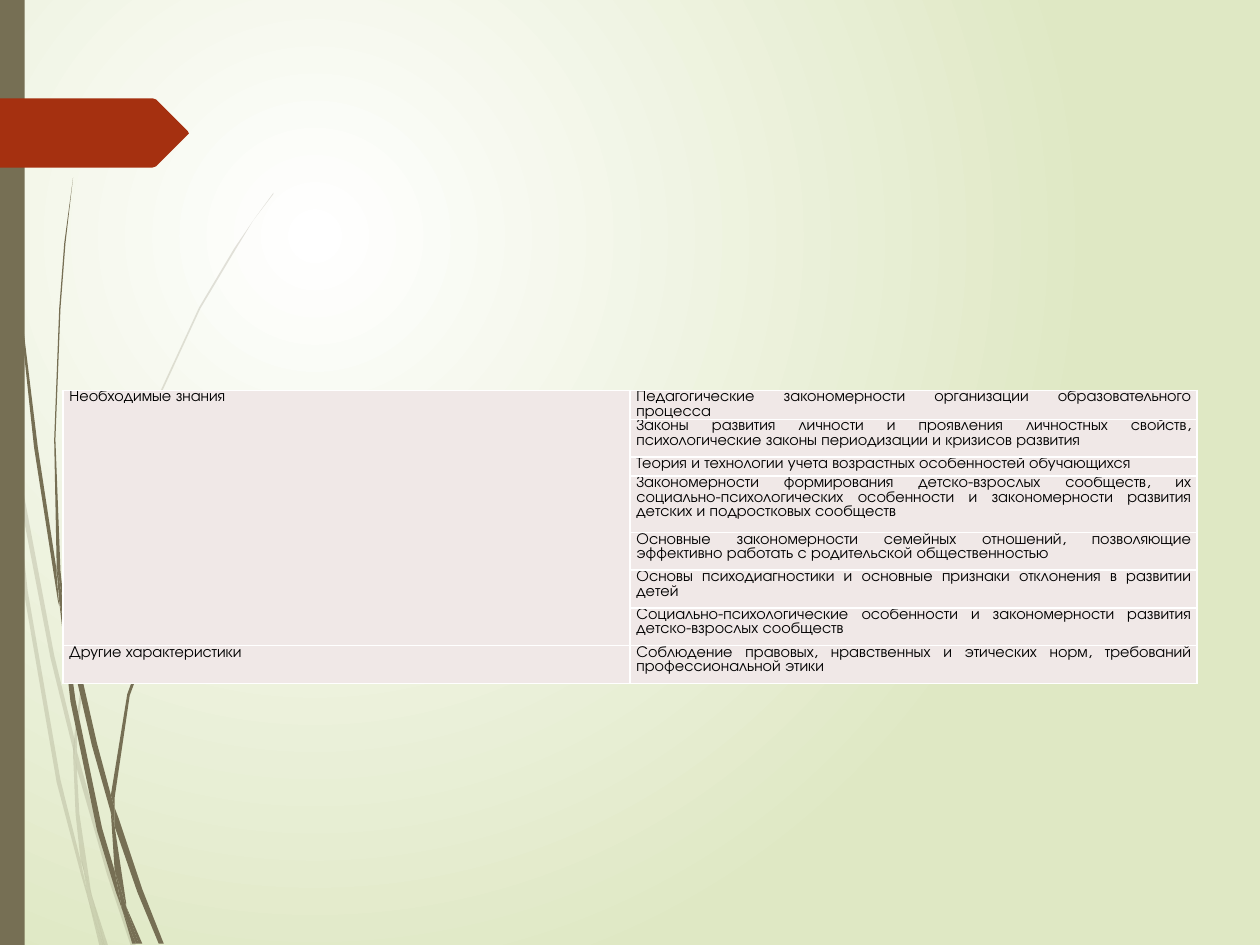
from dataclasses import dataclass

from lxml import etree
from pptx import Presentation
from pptx.dml.color import RGBColor
from pptx.enum.shapes import MSO_SHAPE as Shape
from pptx.enum.text import PP_ALIGN as Align
from pptx.oxml import parse_xml
from pptx.oxml.ns import nsdecls, qn
from pptx.util import Cm, Pt

OLIVE = RGBColor(0x76, 0x6F, 0x54)
RUST = RGBColor(0xA5, 0x30, 0x10)
ROSE = RGBColor(0xF0, 0xE8, 0xE7)
BLACK = RGBColor(0, 0, 0)
WHITE = RGBColor(0xFF, 0xFF, 0xFF)
SAGE = RGBColor(0xDF, 0xE8, 0xC4)
FONT = "TeX Gyre Adventor"
UNIT = Cm(2.54) / 100  # outline nodes are in hundredths of an inch

Node = tuple[int, int]


@dataclass
class Plant:
    opacity: int  # per cent
    leaves: list[list[Node]]


@dataclass
class Section:
    title: str
    align: Align
    entries: list[str]
    heights: list[float]  # cm


PALE_PLANT = Plant(20, [
    [(8, 350), (6, 322), (0, 282), (0, 299), (7, 344)],
    [(40, 522), (59, 599), (59, 586), (43, 520), (10, 345), (12, 376)],
    [(64, 607), (61, 596), (61, 610), (85, 694), (104, 751), (108, 751), (88, 692)],
    [(83, 751), (86, 751), (73, 711)],
    [(64, 683), (48, 619), (22, 469), (12, 376), (8, 350), (19, 470), (45, 621),
     (64, 693), (70, 714), (69, 707)],
    [(58, 599), (60, 646), (64, 683), (67, 692), (73, 711), (72, 706), (63, 646),
     (61, 610), (61, 608)],
    [(61, 584), (76, 462), (111, 349), (159, 245), (187, 198), (201, 175), (217, 154),
     (217, 153), (201, 175), (186, 197), (158, 244), (110, 348), (75, 461), (59, 584),
     (59, 586), (61, 596)],
    [(70, 714), (79, 751), (82, 751)],
    [(61, 608), (61, 610), (61, 596), (59, 586), (58, 599)],
    [(67, 692), (65, 683), (69, 707), (70, 714), (82, 751), (83, 751), (73, 711)],
])
DARK_PLANT = Plant(100, [
    [(5, 110), (14, 233), (27, 355), (46, 477), (47, 481), (45, 457), (45, 453),
     (30, 355), (15, 232), (6, 109), (4, 48), (3, 0), (2, 0), (3, 48)],
    [(73, 592), (88, 645), (88, 633), (88, 631), (77, 590), (50, 472), (53, 505)],
    [(94, 649), (91, 641), (91, 656), (109, 708), (126, 749), (130, 749), (113, 706)],
    [(91, 691), (81, 657), (60, 556), (53, 505), (47, 477), (56, 557), (77, 659),
     (92, 708), (97, 722), (96, 717)],
    [(50, 472), (48, 453), (44, 349), (48, 245), (52, 193), (58, 141), (51, 193),
     (47, 245), (43, 349), (45, 449), (49, 472)],
    [(110, 749), (113, 749), (100, 719)],
    [(47, 477), (53, 505), (50, 472), (49, 472), (45, 449), (45, 453)],
    [(91, 633), (103, 552), (131, 476), (169, 406), (191, 374), (203, 359), (216, 344),
     (215, 344), (203, 358), (191, 373), (168, 405), (129, 474), (101, 551), (88, 631),
     (91, 641)],
    [(97, 722), (105, 749), (108, 749)],
    [(88, 645), (91, 691), (96, 706), (100, 719), (100, 716), (91, 656), (90, 651)],
    [(88, 645), (90, 651), (91, 656), (91, 641), (88, 631), (88, 633)],
    [(96, 706), (91, 691), (96, 717), (97, 722), (108, 749), (110, 749), (100, 719)],
])
ARROW = [(149, 107), (124, 132), (121, 133), (0, 133), (0, 78), (121, 78),
         (124, 79), (149, 104), (150, 106)]

SECTIONS = [
    Section("Необходимые знания", Align.LEFT, [
        "Педагогические закономерности организации образовательного процесса",
        "Законы развития личности и проявления личностных свойств, "
        "психологические законы периодизации и кризисов развития",
        "Теория и технологии учета возрастных особенностей обучающихся",
        "Закономерности формирования детско-взрослых сообществ, их "
        "социально-психологических особенности и закономерности развития "
        "детских и подростковых сообществ",
        "Основные закономерности семейных отношений, позволяющие "
        "эффективно работать с родительской общественностью",
        "Основы психодиагностики и основные признаки отклонения в развитии детей",
        "Социально-психологические особенности и закономерности развития "
        "детско-взрослых сообществ",
    ], [0.38, 0.76, 0.38, 1.14, 0.76, 0.76, 0.76]),
    Section("Другие характеристики", Align.JUSTIFY, [
        "Соблюдение правовых, нравственных и этических норм, "
        "требований профессиональной этики",
    ], [0.76]),
]


def paint(shape, color: RGBColor, opacity: int = 100) -> None:
    shape.shadow.inherit = False
    shape.line.fill.background()
    shape.fill.solid()
    shape.fill.fore_color.rgb = color
    if opacity < 100:
        tint = shape.fill._xPr.find(qn("a:solidFill"))[0]
        etree.SubElement(tint, qn("a:alpha")).set("val", str(opacity * 1000))


def draw_outline(shapes, nodes: list[Node], color: RGBColor, opacity: int = 100) -> None:
    builder = shapes.build_freeform(*nodes[0], scale=UNIT)
    builder.add_line_segments(nodes[1:], close=True)
    paint(builder.convert_to_shape(), color, opacity)


def draw_plant(page, plant: Plant) -> None:
    group = page.shapes.add_group_shape()
    for leaf in plant.leaves:
        draw_outline(group.shapes, leaf, OLIVE, plant.opacity)


def set_background(page) -> None:
    page.background.fill.solid()
    holder = page.background._cSld.bg.bgPr
    holder.replace(holder.find(qn("a:solidFill")), parse_xml(
        f'<a:gradFill {nsdecls("a")} rotWithShape="1"><a:gsLst>'
        f'<a:gs pos="0"><a:srgbClr val="{WHITE}"/></a:gs>'
        f'<a:gs pos="100000"><a:srgbClr val="{SAGE}"/></a:gs></a:gsLst>'
        '<a:path path="circle"><a:fillToRect l="50000" t="50000" r="100000" b="100000"/>'
        '</a:path></a:gradFill>'))


def style_cell(cell) -> None:
    cell.margin_left = cell.margin_right = Cm(0.13)
    cell.margin_top = cell.margin_bottom = 0
    cell.fill.solid()
    cell.fill.fore_color.rgb = ROSE
    properties = cell._tc.get_or_add_tcPr()
    for index, side in enumerate(("lnL", "lnR", "lnT", "lnB")):
        properties.insert(index, parse_xml(
            f'<a:{side} {nsdecls("a")} w="{Pt(1)}"><a:solidFill>'
            f'<a:srgbClr val="{WHITE}"/></a:solidFill></a:{side}>'))


def write(cell, text: str, align: Align) -> None:
    para = cell.text_frame.paragraphs[0]
    para.text = text
    para.alignment = align
    font = para.runs[0].font
    font.name, font.size, font.bold = FONT, Pt(9), False
    font.color.rgb = BLACK


def draw_table(page, sections: list[Section]) -> None:
    heights = [height for section in sections for height in section.heights]
    table = page.shapes.add_table(len(heights), 2, Cm(1.27), Cm(7.87), Cm(22.86),
                                  Cm(sum(heights))).table
    table.first_row = table.horz_banding = False
    for row, height in zip(table.rows, heights):
        row.height = Cm(height)
    for cell in table.iter_cells():
        style_cell(cell)
    top = 0
    for section in sections:
        bottom = top + len(section.entries) - 1
        if bottom > top:
            table.cell(top, 0).merge(table.cell(bottom, 0))
        write(table.cell(top, 0), section.title, section.align)
        for index, entry in enumerate(section.entries, top):
            write(table.cell(index, 1), entry, Align.JUSTIFY)
        top = bottom + 1


def main() -> None:
    deck = Presentation()
    deck.slide_width, deck.slide_height = Cm(25.4), Cm(19.05)
    page = deck.slides.add_slide(deck.slide_layouts[6])

    # Backdrop
    set_background(page)
    for plant in (PALE_PLANT, DARK_PLANT):
        draw_plant(page, plant)
    paint(page.shapes.add_shape(Shape.RECTANGLE, 0, 0, Cm(0.5), deck.slide_height), OLIVE)
    draw_outline(page.shapes, ARROW, RUST)

    # Requirements
    draw_table(page, SECTIONS)
    deck.save("out.pptx")


if __name__ == "__main__":
    main()
